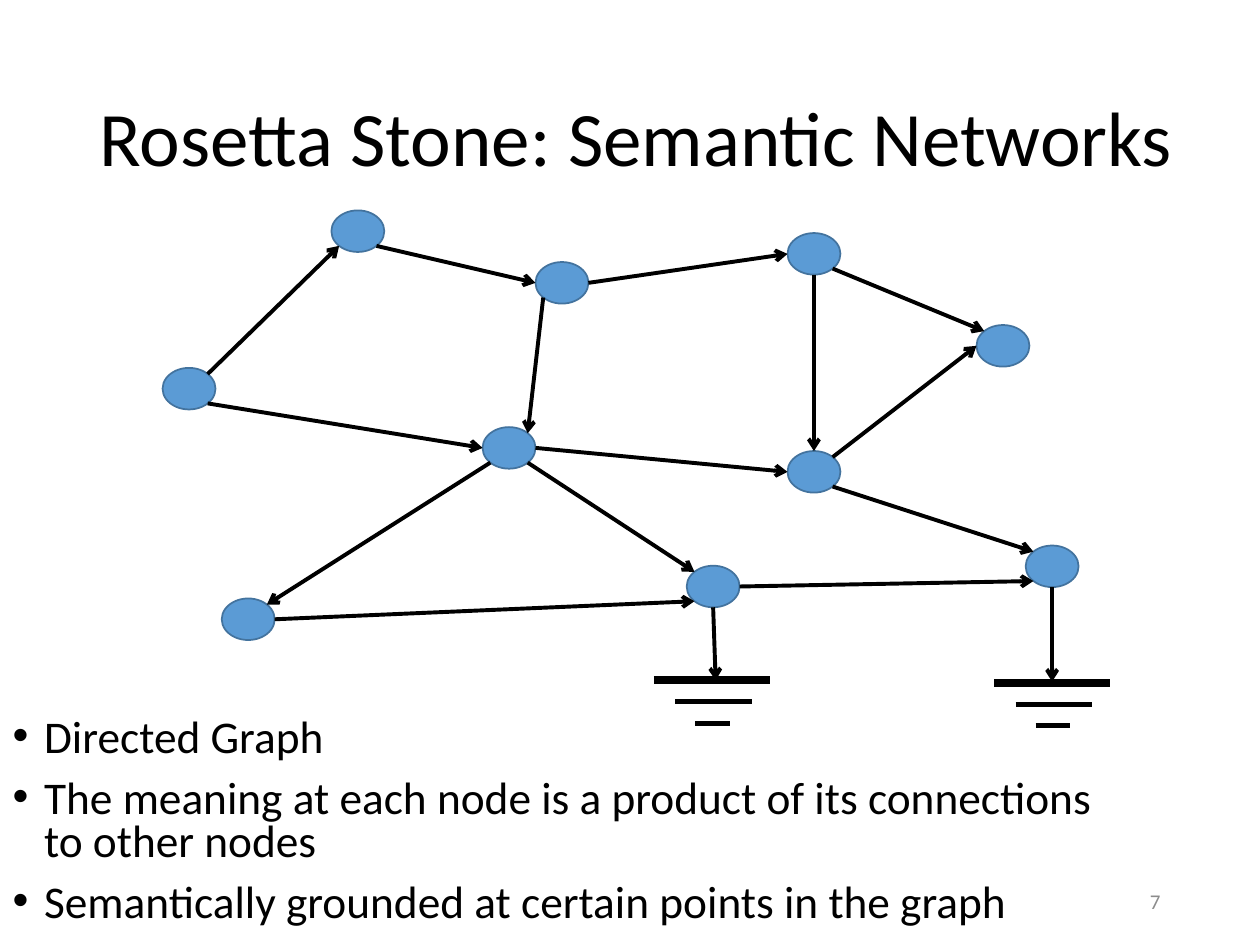
from math import cos, radians, sin

from lxml import etree
from pptx import Presentation
from pptx.dml.color import RGBColor
from pptx.enum.shapes import MSO_CONNECTOR, MSO_SHAPE
from pptx.enum.text import MSO_ANCHOR, MSO_AUTO_SIZE, PP_ALIGN
from pptx.oxml.ns import qn
from pptx.util import Inches, Pt

STRAIGHT = MSO_CONNECTOR.STRAIGHT
OVAL = MSO_SHAPE.OVAL
TOP, MIDDLE = MSO_ANCHOR.TOP, MSO_ANCHOR.MIDDLE
LEFT, RIGHT = PP_ALIGN.LEFT, PP_ALIGN.RIGHT

FONT = "Calibri"
COLORS = {"text": "000000", "node": "5B9BD5", "outline": "43739E", "number": "8C8C8C"}

# Top left corner of each node, all of one size
NODE_W, NODE_H = 0.42, 0.33
NODES = {
    "source": (1.29, 2.92),
    "top left": (2.63, 1.67),
    "hub": (3.83, 3.39),
    "ground right": (8.14, 4.33),
    "sink": (7.75, 2.58),
    "low left": (1.76, 4.75),
    "ground mid": (5.45, 4.49),
    "top mid": (4.25, 2.08),
    "inner": (6.25, 3.58),
    "top right": (6.25, 1.85),
}

# Directions on a node's rim, in degrees clockwise from the right
SITES = {"e": 0, "se": 45, "s": 90, "sw": 135, "w": 180, "nw": 225, "n": 270, "ne": 315}
EDGES = [
    ("top left", "se", "top mid", "w"),
    ("hub", "sw", "low left", "ne"),
    ("source", "se", "hub", "w"),
    ("low left", "e", "ground mid", "sw"),
    ("hub", "se", "ground mid", "nw"),
    ("inner", "se", "ground right", "nw"),
    ("ground mid", "e", "ground right", "sw"),
    ("hub", "e", "inner", "w"),
    ("top mid", "e", "top right", "w"),
    ("inner", "ne", "sink", "w"),
    ("top mid", "sw", "hub", "ne"),
    ("source", "ne", "top left", "sw"),
    ("top right", "se", "sink", "nw"),
    ("top right", "s", "inner", "n"),
]

# Grounded node, arrow tip, left and top of the ground symbol
GROUNDS = [
    ("ground mid", (5.68, 5.4), 5.19, 5.4),
    ("ground right", (8.35, 5.41), 7.89, 5.42),
]
# Offset, length and width of the bars in a ground symbol
BARS = [(0, 0.92, 4.5), (0.17, 0.61, 3), (0.33, 0.27, 3)]
BAR_GAP = 0.17

BULLETS = [
    "Directed Graph",
    "The meaning at each node is a product of its connections to other nodes",
    "Semantically grounded at certain points in the graph",
]


def rgb(name):
    return RGBColor.from_string(COLORS[name])


def place(sp, x, y, w, h):
    sp.left, sp.top, sp.width, sp.height = map(Inches, (x, y, w, h))


def write(sp, lines, size, color="text", align=LEFT, anchor=MIDDLE,
          spacing=None, before=None, indent=None):
    tf = sp.text_frame
    tf.word_wrap = True
    tf.auto_size = MSO_AUTO_SIZE.NONE
    tf.vertical_anchor = anchor
    for i, line in enumerate(lines):
        p = tf.add_paragraph() if i else tf.paragraphs[0]
        p.alignment = align
        p.line_spacing = spacing
        p.space_before = before
        if indent is not None:
            pPr = p._p.get_or_add_pPr()
            pPr.set("marL", str(Inches(indent)))
            pPr.set("indent", str(-Inches(indent)))
            etree.SubElement(pPr, qn("a:buChar")).set("char", "•")
        r = p.add_run()
        r.text = line
        r.font.name = FONT
        r.font.size = Pt(size)
        r.font.color.rgb = rgb(color)


def add_node(s, x, y):
    sp = s.shapes.add_shape(OVAL, *map(Inches, (x, y, NODE_W, NODE_H)))
    sp.shadow.inherit = False
    sp.fill.solid()
    sp.fill.fore_color.rgb = rgb("node")
    sp.line.color.rgb = rgb("outline")
    sp.line.width = Pt(1)


def add_line(s, start, end, width=2.25, arrow=False):
    cx = s.shapes.add_connector(STRAIGHT, *map(Inches, (*start, *end)))
    cx.line.color.rgb = rgb("text")
    cx.line.width = Pt(width)
    if arrow:
        etree.SubElement(cx.line._get_or_add_ln(), qn("a:tailEnd")).set("type", "arrow")
    etree.SubElement(cx._element.spPr, qn("a:effectLst"))


def rim(node, site):
    x, y = NODES[node]
    angle = radians(SITES[site])
    return x + NODE_W / 2 * (1 + cos(angle)), y + NODE_H / 2 * (1 + sin(angle))


def add_ground(s, node, tip, x, y):
    add_line(s, rim(node, "s"), tip, arrow=True)
    for i, (dx, length, width) in enumerate(BARS):
        bar_y = y + i * BAR_GAP
        add_line(s, (x + dx, bar_y), (x + dx + length, bar_y), width)


def main():
    prs = Presentation()
    prs.slide_width, prs.slide_height = Inches(10), Inches(7.5)
    s = prs.slides.add_slide(prs.slide_layouts[1])

    # Title
    title = s.shapes.title
    place(title, 0.69, 0.4, 8.91, 1.45)
    write(title, ["Rosetta Stone: Semantic Networks"], 44, spacing=0.9)

    # Directed graph
    for x, y in NODES.values():
        add_node(s, x, y)
    for start, start_site, end, end_site in EDGES:
        add_line(s, rim(start, start_site), rim(end, end_site), arrow=True)
    for ground in GROUNDS:
        add_ground(s, *ground)

    # Slide number
    number = s.shapes.add_textbox(*map(Inches, (7.06, 6.95, 2.25, 0.4)))
    write(number, ["7"], 12, color="number", align=RIGHT)

    # Bullets
    body = s.placeholders[1]
    place(body, 0, 5.65, 9, 1.81)
    write(body, BULLETS, 25.9, anchor=TOP, spacing=0.8, before=Pt(10), indent=0.25)

    prs.save("out.pptx")


if __name__ == "__main__":
    main()
